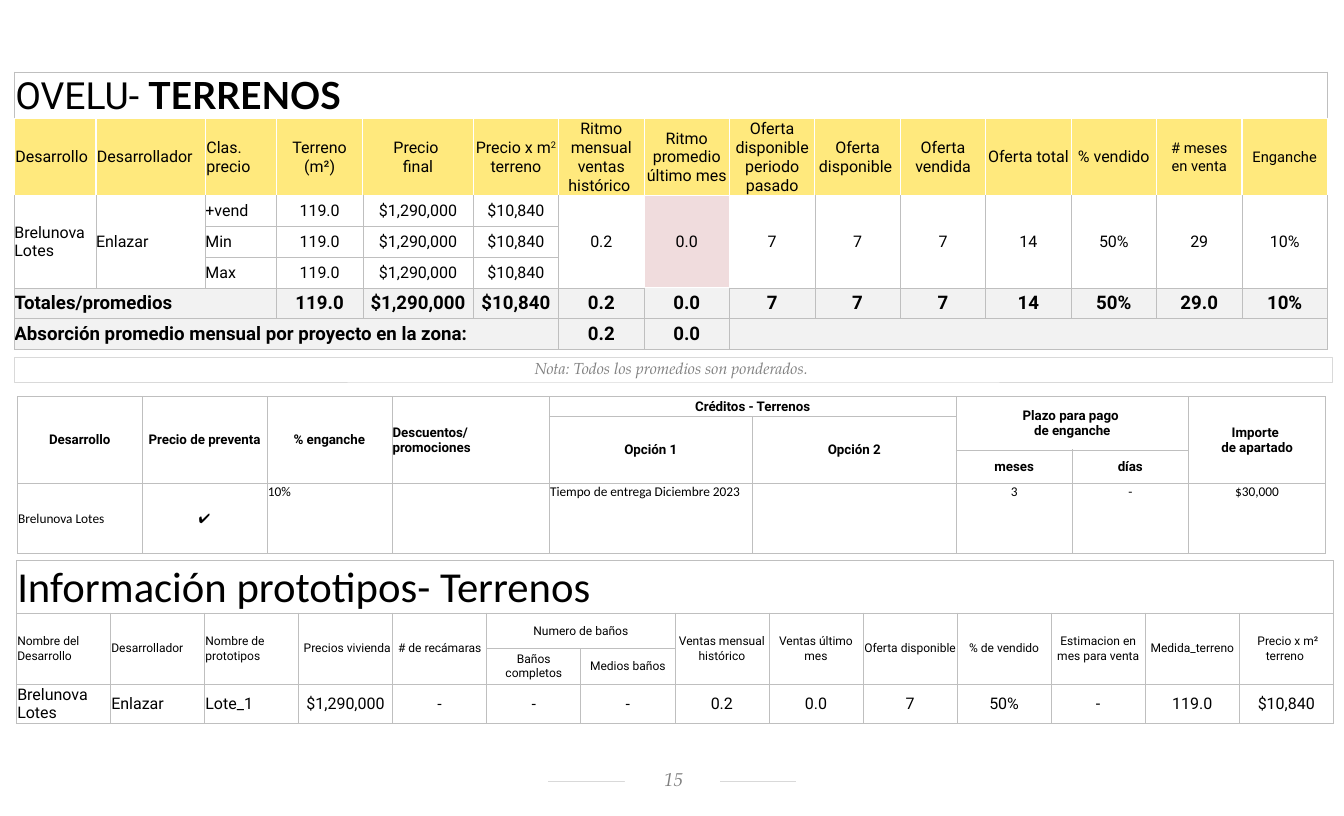
"""Build the slide of land sales tables with python-pptx."""
from dataclasses import dataclass, field

from lxml.etree import SubElement
from pptx import Presentation
from pptx.dml.color import RGBColor
from pptx.enum.shapes import MSO_CONNECTOR
from pptx.enum.text import MSO_ANCHOR, PP_ALIGN
from pptx.oxml.ns import qn
from pptx.util import Inches, Pt

WHITE, BLACK, GREY = "FFFFFF", "000000", "BFBFBF"
YELLOW, PINK, PALE = "FFE97D", "F0DCDD", "F2F2F2"
RULE, MUTED = "D9D9D9", "808080"
SERIF = {"name": "TeX Gyre Pagella", "italic": True}


def font_of(size: float, name: str = "Roboto", bold: bool = False) -> dict:
    return {"size": Pt(size), "name": name, "bold": bold}


@dataclass
class Cell:
    text: str = ""
    rows: int = 1
    columns: int = 1
    fonts: tuple = ()
    fill: str | None = None
    white_edges: str = ""


@dataclass
class Row:
    height: float
    font: dict
    cells: list
    left: set = field(default_factory=set)
    top: set = field(default_factory=set)
    fill: str | None = None
    white_edges: str = ""
    inset: float = 0.01


def paint(target, colour: str) -> None:
    target.rgb = RGBColor.from_string(colour)


def fill_solid(fill, colour: str) -> None:
    fill.solid()
    paint(fill.fore_color, colour)


def write_span(para, text: str, font: dict, colour: str = BLACK) -> None:
    span = para.add_run()
    span.text = text
    for name, value in font.items():
        if name == "baseline":
            span._r.get_or_add_rPr().set(name, value)
        else:
            setattr(span.font, name, value)
    paint(span.font.color, colour)


def set_insets(target, left: float, top: float, right: float, bottom: float) -> None:
    for side, value in zip(("left", "top", "right", "bottom"), (left, top, right, bottom)):
        setattr(target, f"margin_{side}", Inches(value))


def draw_borders(box, width: float, white_edges: str) -> None:
    properties = box._tc.get_or_add_tcPr()
    for edge in "LRTB":
        white = edge in white_edges
        line = SubElement(properties, qn(f"a:ln{edge}"), w=str(Pt(1 if white else width)))
        solid = SubElement(line, qn("a:solidFill"))
        SubElement(solid, qn("a:srgbClr"), val=WHITE if white else GREY)


def format_box(box, cell: Cell, row: Row, border: float) -> None:
    set_insets(box, row.inset, row.inset, row.inset, 0)
    draw_borders(box, border, cell.white_edges or row.white_edges)
    colour = cell.fill or row.fill
    if colour:
        fill_solid(box.fill, colour)
    else:
        box.fill.background()


def write_cell(box, cell: Cell, row: Row, column: int) -> None:
    box.vertical_anchor = MSO_ANCHOR.TOP if column in row.top else MSO_ANCHOR.MIDDLE
    for index, text in enumerate(cell.text.split("\n") if cell.text else []):
        para = box.text_frame.add_paragraph() if index else box.text_frame.paragraphs[0]
        para.alignment = PP_ALIGN.LEFT if column in row.left else PP_ALIGN.CENTER
        for position, part in enumerate(text.split("|")):
            override = cell.fonts[position] if cell.fonts else {}
            write_span(para, part, row.font | override)


def draw_table(page, left: float, top: float, widths: list, rows: list, border: float) -> None:
    height = sum(row.height for row in rows)
    table = page.shapes.add_table(len(rows), len(widths), Inches(left), Inches(top),
                                  Inches(sum(widths)), Inches(height)).table
    table.first_row = table.horz_banding = False
    for column, width in zip(table.columns, widths):
        column.width = Inches(width)
    for line, row in enumerate(rows):
        table.rows[line].height = Inches(row.height)
        for column, item in enumerate(row.cells):
            if item is None:
                continue
            cell = Cell(item) if isinstance(item, str) else item
            for down in range(cell.rows):
                for across in range(cell.columns):
                    format_box(table.cell(line + down, column + across), cell, row, border)
            box = table.cell(line, column)
            if cell.rows * cell.columns > 1:
                box.merge(table.cell(line + cell.rows - 1, column + cell.columns - 1))
            write_cell(box, cell, row, column)


def draw_text(page, place: tuple, text: str, size: float, insets: tuple):
    box = page.shapes.add_textbox(*map(Inches, place))
    frame = box.text_frame
    frame.word_wrap = True
    set_insets(frame, *insets)
    para = frame.paragraphs[0]
    para.alignment = PP_ALIGN.CENTER
    write_span(para, text, SERIF | {"size": Pt(size)}, MUTED)
    return box


def draw_page_number(page) -> None:
    line = page.shapes.add_connector(MSO_CONNECTOR.STRAIGHT, Inches(5.71), Inches(8.14),
                                     Inches(8.29), Inches(8.14))
    line.line.width = Pt(0.75)
    paint(line.line.color, RULE)
    SubElement(line._element.spPr, qn("a:effectLst"))
    box = draw_text(page, (6.51, 7.98, 0.99, 0.29), "15", 14, (0.12, 0.02, 0.1, 0.05))
    box.text_frame.vertical_anchor = MSO_ANCHOR.MIDDLE
    fill_solid(box.fill, WHITE)


def draw_note(page) -> None:
    box = draw_text(page, (0.15, 3.72, 13.73, 0.26),
                    "Nota: Todos los promedios son ponderados. ", 12, (0.1, 0.05, 0.1, 0.05))
    box.text_frame.paragraphs[0].line_spacing = 0.8
    box.line.width = Pt(0.75)
    paint(box.line.color, RULE)


def sales_rows() -> list:
    small = (font_of(11),)
    header = ["Desarrollo", "Desarrollador", "Clas.\nprecio", "Terreno\n(m²)", "Precio \nfinal",
              Cell("Precio x m|2 |terreno", fonts=({}, {"baseline": "30000"}, {})),
              "Ritmo mensual ventas histórico ", "Ritmo promedio último mes",
              "Oferta disponible periodo pasado", "Oferta disponible ", "Oferta vendida",
              "Oferta total", "% vendido", Cell("# meses\nen venta", fonts=small),
              Cell("Enganche", fonts=small)]
    prices = ["119.0", "$1,290,000", "$10,840"]
    merged = [Cell(text, rows=3) for text in ("7", "7", "14", "50%", "29", "10%")]
    first = [Cell("Brelunova Lotes", rows=3), Cell("Enlazar", rows=3), "+vend", *prices,
             Cell("0.2", rows=3, white_edges="TR"),
             Cell("0.0", rows=3, fill=PINK, white_edges="LRTB"),
             Cell("7", rows=3, white_edges="TL"), *merged]
    totals = [Cell("Totales/promedios", columns=3), None, None, *prices, "0.2",
              Cell("0.0", white_edges="T"), "7", "7", "7", "14", "50%", "29.0", "10%"]
    absorption = [Cell("Absorción promedio mensual por proyecto en la zona:", columns=6),
                  *[None] * 5, "0.2", "0.0", Cell(columns=7)]
    title = Cell("OVELU- |TERRENOS", columns=15, fonts=({}, {"name": "Lato", "bold": True}))
    body, strong, left = font_of(12), font_of(14, bold=True), {0, 1, 2}
    return [Row(0.48, font_of(28), [title], left, white_edges="B"),
            Row(0.81, body, header, left, fill=YELLOW, white_edges="LRTB"),
            Row(0.32, body, first, left, white_edges="T", inset=0),
            *[Row(0.32, body, [None, None, name, *prices], left, inset=0)
              for name in ("Min", "Max")],
            *[Row(0.32, strong, cells, left, fill=PALE, inset=0)
              for cells in (totals, absorption)]]


def credit_rows() -> list:
    heading = [Cell(text, rows=3) for text in
               ("Desarrollo", "Precio de preventa", "% enganche", "Descuentos/ promociones")]
    heading += [Cell("Créditos - Terrenos", columns=2), None,
                Cell("Plazo para pago \nde enganche", rows=2, columns=2), None,
                Cell("Importe \nde apartado", rows=3)]
    options = [*[None] * 4, Cell("Opción 1", rows=2), Cell("Opción 2", rows=2)]
    values = ["Brelunova Lotes", Cell("✔", fonts=({"name": "Arial"},)), "10%", "",
              "Tiempo de entrega Diciembre 2023", "", "3", "-", "$30,000"]
    strong = font_of(10, bold=True)
    return [Row(0.21, strong, heading, {3}), Row(0.34, strong, options),
            Row(0.35, strong, [*[None] * 6, "meses", "días"]),
            Row(0.73, font_of(10, "Calibri"), values, {0, 2, 4}, set(range(2, 9)))]


def prototype_rows() -> list:
    before = ["Nombre del Desarrollo", "Desarrollador", "Nombre de prototipos",
              " Precios vivienda ", "# de recámaras"]
    after = ["Ventas mensual histórico", "Ventas último mes", "Oferta disponible",
             "% de vendido", "Estimacion en mes para venta", "Medida_terreno",
             " Precio x m² terreno "]
    header = [*[Cell(text, rows=2) for text in before], Cell("Numero de baños", columns=2), None,
              *[Cell(text, rows=2) for text in after]]
    dashes = [Cell("-", fonts=({"name": "Calibri"},))] * 3
    values = ["Brelunova Lotes", "Enlazar", "Lote_1", "$1,290,000", *dashes,
              "0.2", "0.0", "7", "50%", "-", "119.0", "$10,840"]
    left = {0, 1, 2}
    return [Row(0.54, font_of(32, "Calibri"),
                [Cell("Información prototipos- Terrenos", columns=14)], left),
            Row(0.37, font_of(9), header, left),
            Row(0.37, font_of(9), [*[None] * 5, "Baños completos", "Medios baños"]),
            Row(0.41, font_of(12), values, left)]


def main() -> None:
    deck = Presentation()
    deck.slide_width, deck.slide_height = Inches(14), Inches(8.5)
    page = deck.slides.add_slide(deck.slide_layouts[6])
    draw_page_number(page)
    draw_table(page, 0.15, 0.75, [0.85, 1.14, 0.74, 0.9, 1.15] + [0.89] * 10, sales_rows(), 0.5)
    draw_note(page)
    draw_table(page, 0.18, 4.13, [1.3] * 3 + [1.64, 2.12, 2.12, 1.21, 1.21, 1.43],
               credit_rows(), 0.25)
    draw_table(page, 0.17, 5.84, [0.98] * 14, prototype_rows(), 0.5)
    deck.save("out.pptx")


if __name__ == "__main__":
    main()
